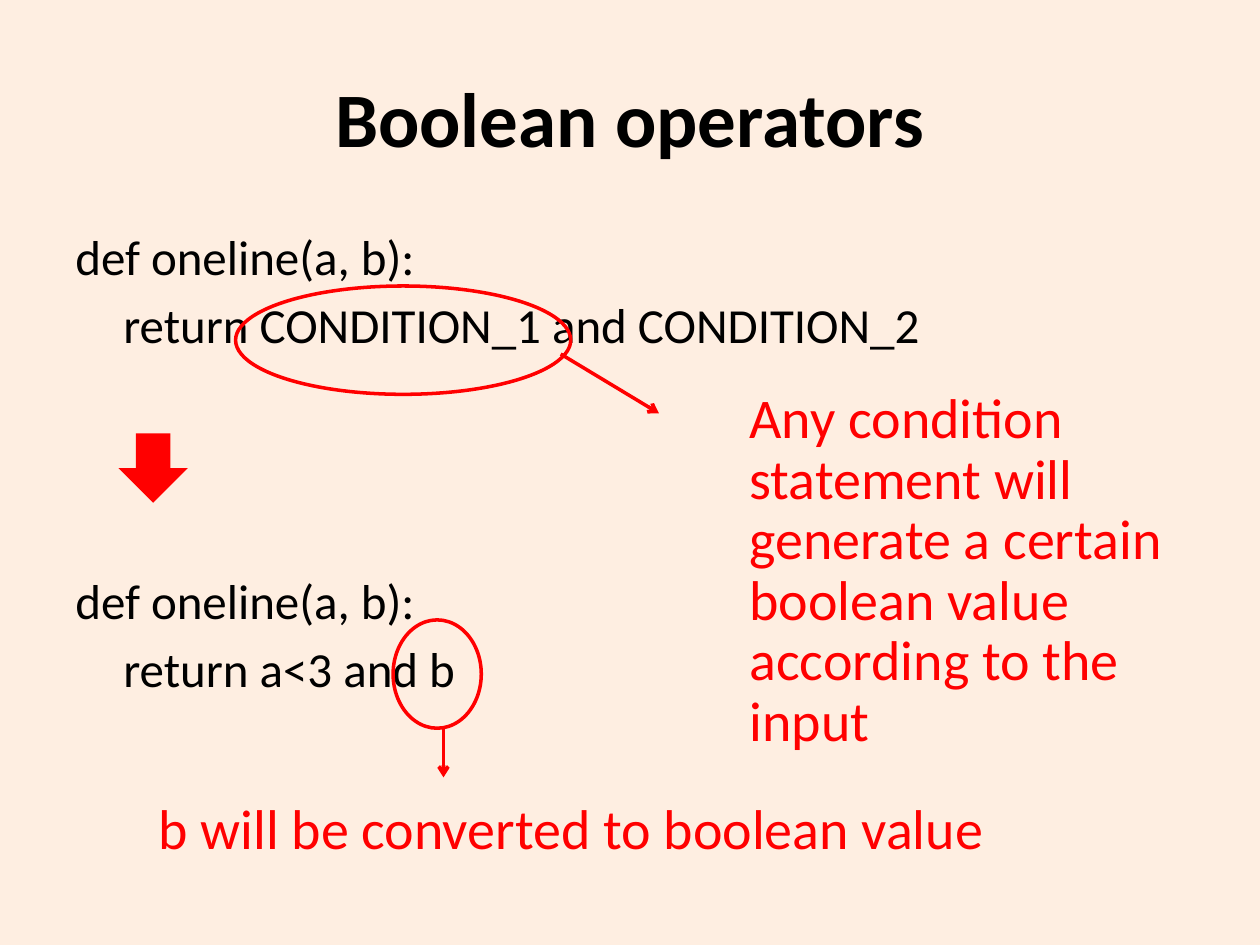
import pptx
import pptx.util
import pptx.dml.color
import pptx.enum.shapes
import pptx.enum.text
import lxml.etree
from pptx.oxml.ns import qn

Inches, Pt = pptx.util.Inches, pptx.util.Pt
SHAPE = pptx.enum.shapes.MSO_SHAPE
ALIGN = pptx.enum.text.PP_ALIGN
ANCHOR = pptx.enum.text.MSO_ANCHOR

THEME = {
    "background": "FEEEE1", "ink": "000000", "accent": "FF0000",
    "font": "Calibri", "title": 44, "code": 28, "note": 32,
    "stroke": 2, "indent": 0.38, "gap": 5.2,
}

TITLE = ("Boolean operators", (0.5, 0.3, 9, 1.25))
CODE_LEFT, CODE_WIDTH, CODE_HEIGHT = 0.5, 9.11, 1.2
CODE_BLOCKS = [  # top, lines as (indent level, text)
    (1.75, [(0, "def oneline(a, b):"), (1, "return CONDITION_1 and CONDITION_2")]),
    (4.48, [(0, "def oneline(a, b):"), (1, "return a<3 and b")]),
]
NOTES = [  # text, box, line spacing
    ("Any condition statement will generate a certain boolean value according to the input",
     (5.47, 3.05, 4.3, 3.28), 0.9),
    ("b will be converted to boolean value", (0.78, 6.25, 7.5, 0.7), 1.0),
]
STEP_ARROW = (0.94, 3.44, 0.55, 0.55)
CIRCLES = [(1.87, 2.27, 2.66, 0.86), (3.12, 4.92, 0.7, 0.86)]
POINTERS = [(4.45, 2.81, 5.23, 3.28), (3.52, 5.78, 3.52, 6.17)]


def color(name):
    return pptx.dml.color.RGBColor.from_string(THEME[name])


def inches(lengths):
    return [Inches(length) for length in lengths]


def add_text(slide, box, lines, size, ink, bold=False, anchor=ANCHOR.TOP, **paragraph_format):
    """Add a text box; lines are (indent level, text) pairs."""
    frame = slide.shapes.add_textbox(*inches(box)).text_frame
    frame.word_wrap = True
    frame.vertical_anchor = anchor
    for number, (level, text) in enumerate(lines):
        paragraph = frame.add_paragraph() if number else frame.paragraphs[0]
        settings = {"space_before": Pt(THEME["gap"]), **paragraph_format}
        for name, value in settings.items():
            setattr(paragraph, name, value)
        if level:
            margin = Inches(level * THEME["indent"])
            paragraph._p.get_or_add_pPr().set("marL", str(margin))
        run = paragraph.add_run()
        run.text = text
        for name, value in {"name": THEME["font"], "size": Pt(THEME[size]), "bold": bold}.items():
            setattr(run.font, name, value)
        run.font.color.rgb = color(ink)


def add_step_arrow(slide):
    arrow = slide.shapes.add_shape(SHAPE.DOWN_ARROW, *inches(STEP_ARROW))
    arrow.shadow.inherit = False
    arrow.fill.solid()
    arrow.fill.fore_color.rgb = color("accent")
    arrow.line.fill.background()


def draw_stroke(line):
    line.color.rgb = color("accent")
    line.width = Pt(THEME["stroke"])


def add_circle(slide, box):
    circle = slide.shapes.add_shape(SHAPE.OVAL, *inches(box))
    circle.shadow.inherit = False
    circle.fill.background()
    draw_stroke(circle.line)


def add_pointer(slide, ends):
    pointer = slide.shapes.add_connector(pptx.enum.shapes.MSO_CONNECTOR.STRAIGHT, *inches(ends))
    draw_stroke(pointer.line)
    properties = pointer._element.spPr
    lxml.etree.SubElement(properties.find(qn("a:ln")), qn("a:tailEnd"), type="arrow")
    lxml.etree.SubElement(properties, qn("a:effectLst"))


def main():
    deck = pptx.Presentation()
    deck.slide_width, deck.slide_height = inches((10, 7.5))
    slide = deck.slides.add_slide(deck.slide_layouts[6])
    slide.background.fill.solid()
    slide.background.fill.fore_color.rgb = color("background")

    title, title_box = TITLE
    add_text(slide, title_box, [(0, title)], "title", "ink", bold=True,
             anchor=ANCHOR.MIDDLE, alignment=ALIGN.CENTER, space_before=Pt(0))
    for top, lines in CODE_BLOCKS:
        add_text(slide, (CODE_LEFT, top, CODE_WIDTH, CODE_HEIGHT), lines, "code", "ink")
    add_step_arrow(slide)
    for text, box, spacing in NOTES:
        add_text(slide, box, [(1, text)], "note", "accent", line_spacing=spacing)
    for box in CIRCLES:
        add_circle(slide, box)
    for ends in POINTERS:
        add_pointer(slide, ends)
    deck.save("out.pptx")


if __name__ == "__main__":
    main()
